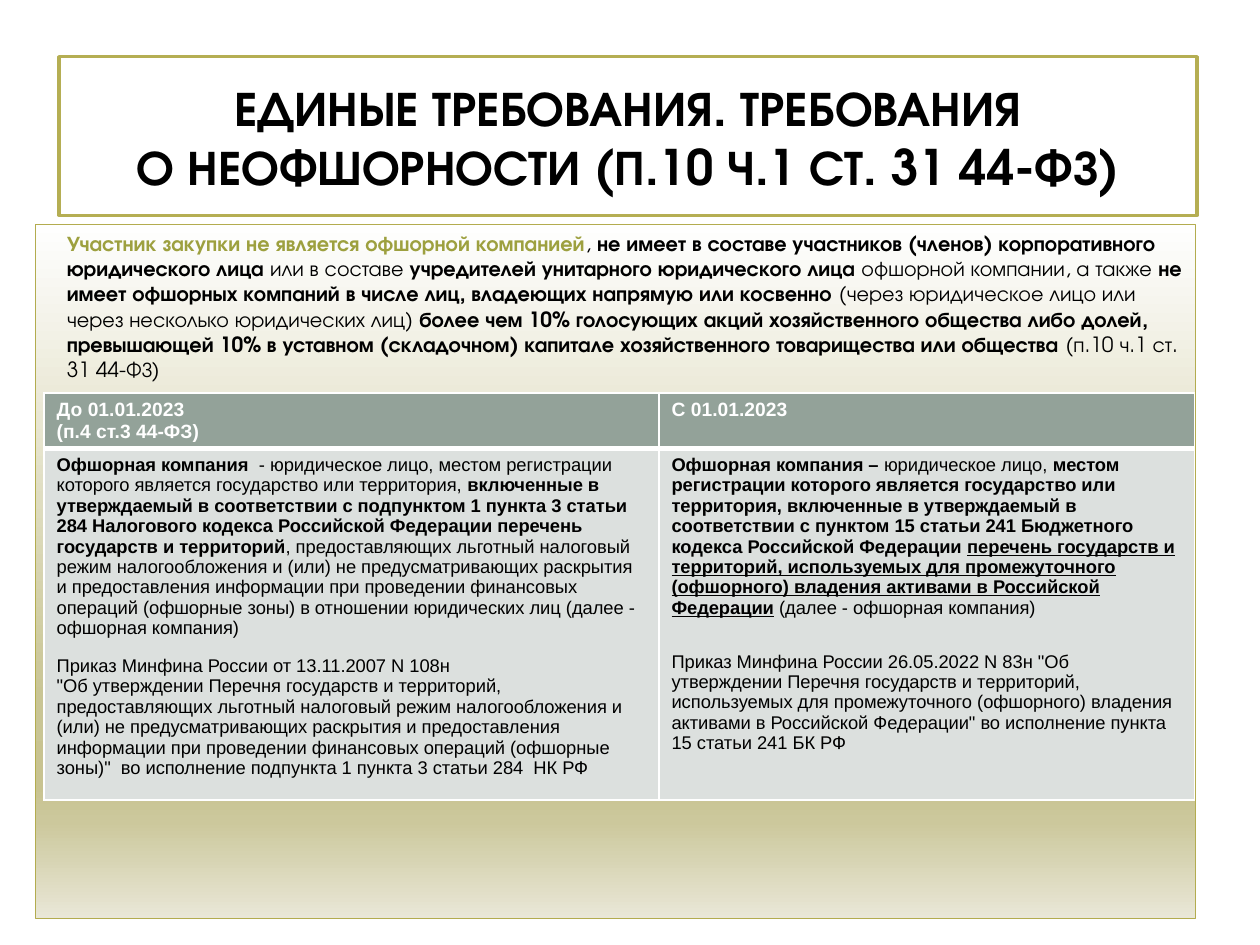
from dataclasses import dataclass

from lxml import etree
from pptx import Presentation
from pptx import util as u
from pptx.dml import color
from pptx.enum import shapes, text
from pptx.oxml import ns

DISPLAY = "TeX Gyre Adventor"
PLAIN = "Arial"
BLACK = "000000"
WHITE = "FFFFFF"
OLIVE = "B3AC4F"
GRADIENT = [(0, "FEFEFE"), (68, "C9C594"), (81, "C8C390"), (86, "CCC89C"), (100, "E9E7D7")]


@dataclass
class Span:
    text: str
    bold: bool = False
    underline: bool = False
    tint: str | None = None


@dataclass
class Para:
    spans: list[Span]
    before: float = 0


@dataclass
class Style:
    font: str
    size: float
    tint: str = BLACK
    bold: bool | None = None


def rgb(value: str) -> color.RGBColor:
    return color.RGBColor.from_string(value)


def write(frame, paras: list[Para], style: Style) -> None:
    for index, item in enumerate(paras):
        para = frame.paragraphs[0] if index == 0 else frame.add_paragraph()
        para.space_before = u.Pt(item.before)
        para.font.name = style.font
        para.font.size = u.Pt(style.size)
        para.font.bold = style.bold
        para.font.color.rgb = rgb(style.tint)
        for span in item.spans:
            run = para.add_run()
            run.text = span.text
            if style.bold is None:
                run.font.bold = span.bold
            if span.underline:
                run.font.underline = True
            if span.tint:
                run.font.color.rgb = rgb(span.tint)


def add_box(page, left: float, top: float, width: float, height: float, line: str, weight: float):
    box = page.shapes.add_shape(
        shapes.MSO_SHAPE.RECTANGLE,
        u.Inches(left), u.Inches(top), u.Inches(width), u.Inches(height),
    )
    box.shadow.inherit = False
    box.line.color.rgb = rgb(line)
    box.line.width = u.Pt(weight)
    box.text_frame.word_wrap = True
    return box


def fill_gradient(box, stops: list[tuple[int, str]]) -> None:
    box.fill.gradient()
    box.fill.gradient_angle = 270
    stop_list = box.fill._xPr.find(".//" + ns.qn("a:gsLst"))
    for old in list(stop_list):
        stop_list.remove(old)
    for position, tint in stops:
        stop = etree.SubElement(stop_list, ns.qn("a:gs"), pos=str(position * 1000))
        etree.SubElement(stop, ns.qn("a:srgbClr"), val=tint)


def set_borders(cell, top: float, bottom: float) -> None:
    properties = cell._tc.get_or_add_tcPr()
    for side, weight in {"lnL": 1, "lnR": 1, "lnT": top, "lnB": bottom}.items():
        line = etree.SubElement(properties, ns.qn(f"a:{side}"), w=str(u.Pt(weight)))
        solid = etree.SubElement(line, ns.qn("a:solidFill"))
        etree.SubElement(solid, ns.qn("a:srgbClr"), val=WHITE)


def add_title(page) -> None:
    box = add_box(page, 0.47, 0.45, 9.03, 1.26, "B5AE53", 2)
    box.fill.solid()
    box.fill.fore_color.rgb = rgb(WHITE)
    frame = box.text_frame
    frame.vertical_anchor = text.MSO_ANCHOR.MIDDLE
    title = "ЕДИНЫЕ ТРЕБОВАНИЯ. ТРЕБОВАНИЯ\vО НЕОФШОРНОСТИ (П.10 Ч.1 СТ. 31 44-ФЗ)"
    write(frame, [Para([])], Style(DISPLAY, 28, bold=True))
    para = frame.paragraphs[0]
    para.text = title
    para.alignment = text.PP_ALIGN.CENTER


def add_requirement(page) -> None:
    box = add_box(page, 0.28, 1.78, 9.21, 5.51, OLIVE, 0.75)
    fill_gradient(box, GRADIENT)
    frame = box.text_frame
    frame.vertical_anchor = text.MSO_ANCHOR.TOP
    frame.margin_left = u.Inches(0.25)
    write(frame, [Para(REQUIREMENT, before=2.4)], Style(DISPLAY, 12))
    frame.paragraphs[0].alignment = text.PP_ALIGN.LEFT


def add_comparison(page) -> None:
    widths, heights = [4.88, 4.25], [0.44, 2.79]
    table = page.shapes.add_table(
        2, 2, u.Inches(0.35), u.Inches(3.12), u.Inches(sum(widths)), u.Inches(sum(heights)),
    ).table
    table.horz_banding = False
    for column, width in zip(table.columns, widths):
        column.width = u.Inches(width)
    for row, height in zip(table.rows, heights):
        row.height = u.Inches(height)
    rows = [
        (HEADINGS, Style(PLAIN, 11, WHITE, True), "93A299", 1, 3),
        (DEFINITIONS, Style(PLAIN, 10.5), "DCE0DE", 3, 1),
    ]
    for row, (contents, style, fill, top, bottom) in enumerate(rows):
        for column, paras in enumerate(contents):
            cell = table.cell(row, column)
            set_borders(cell, top, bottom)
            cell.fill.solid()
            cell.fill.fore_color.rgb = rgb(fill)
            write(cell.text_frame, paras, style)


REQUIREMENT = [
    Span("Участник закупки не является офшорной компанией", bold=True, tint="9DA03F"),
    Span(", "),
    Span("не имеет в составе участников (членов) корпоративного юридического лица ", bold=True),
    Span("или в составе "),
    Span("учредителей унитарного юридического лица ", bold=True),
    Span("офшорной компании, а также "),
    Span("не имеет офшорных компаний в числе лиц, владеющих напрямую или косвенно", bold=True),
    Span(" (через юридическое лицо или через несколько юридических лиц) "),
    Span("более чем 10% голосующих акций хозяйственного общества либо долей, превышающей 10% "
         "в уставном (складочном) капитале хозяйственного товарищества или общества ", bold=True),
    Span("(п.10 ч.1 ст. 31 44-ФЗ)"),
]

HEADINGS = [
    [Para([Span("До 01.01.2023")]), Para([Span("(п.4 ст.3 44-ФЗ)")])],
    [Para([Span("С 01.01.2023")])],
]

DEFINITIONS = [
    [
        Para([
            Span("Офшорная компания  ", bold=True),
            Span("- юридическое лицо, местом регистрации которого является государство "
                 "или территория, "),
            Span("включенные в утверждаемый в соответствии с подпунктом 1 пункта 3 статьи 284 "
                 "Налогового кодекса Российской Федерации перечень государств и территорий",
                 bold=True),
            Span(", предоставляющих льготный налоговый режим налогообложения и (или) "
                 "не предусматривающих раскрытия и предоставления информации при проведении "
                 "финансовых операций (офшорные зоны) в отношении юридических лиц "
                 "(далее - офшорная компания)"),
        ]),
        Para([Span("Приказ Минфина России от 13.11.2007 N 108н")], before=10),
        Para([Span('"Об утверждении Перечня государств и территорий, предоставляющих льготный '
                   "налоговый режим налогообложения и (или) не предусматривающих раскрытия и "
                   "предоставления информации при проведении финансовых операций (офшорные "
                   'зоны)"  во исполнение подпункта 1 пункта 3 статьи 284  НК РФ')]),
    ],
    [
        Para([
            Span("Офшорная компания – ", bold=True),
            Span("юридическое лицо, "),
            Span("местом регистрации которого является государство или территория, включенные "
                 "в утверждаемый в соответствии с пунктом 15 статьи 241 Бюджетного кодекса "
                 "Российской Федерации ", bold=True),
            Span("перечень государств и территорий, используемых для промежуточного "
                 "(офшорного) владения активами в Российской Федерации",
                 bold=True, underline=True),
            Span(" (далее - офшорная компания)"),
        ]),
        Para([Span('Приказ Минфина России 26.05.2022 N 83н "Об утверждении Перечня государств '
                   "и территорий, используемых для промежуточного (офшорного) владения активами "
                   'в Российской Федерации" во исполнение пункта 15 статьи 241 БК РФ')],
             before=19.2),
    ],
]


if __name__ == "__main__":
    deck = Presentation()
    deck.slide_width, deck.slide_height = u.Inches(10), u.Inches(7.5)
    page = deck.slides.add_slide(deck.slide_layouts[6])
    add_title(page)
    add_requirement(page)
    add_comparison(page)
    deck.save("out.pptx")
